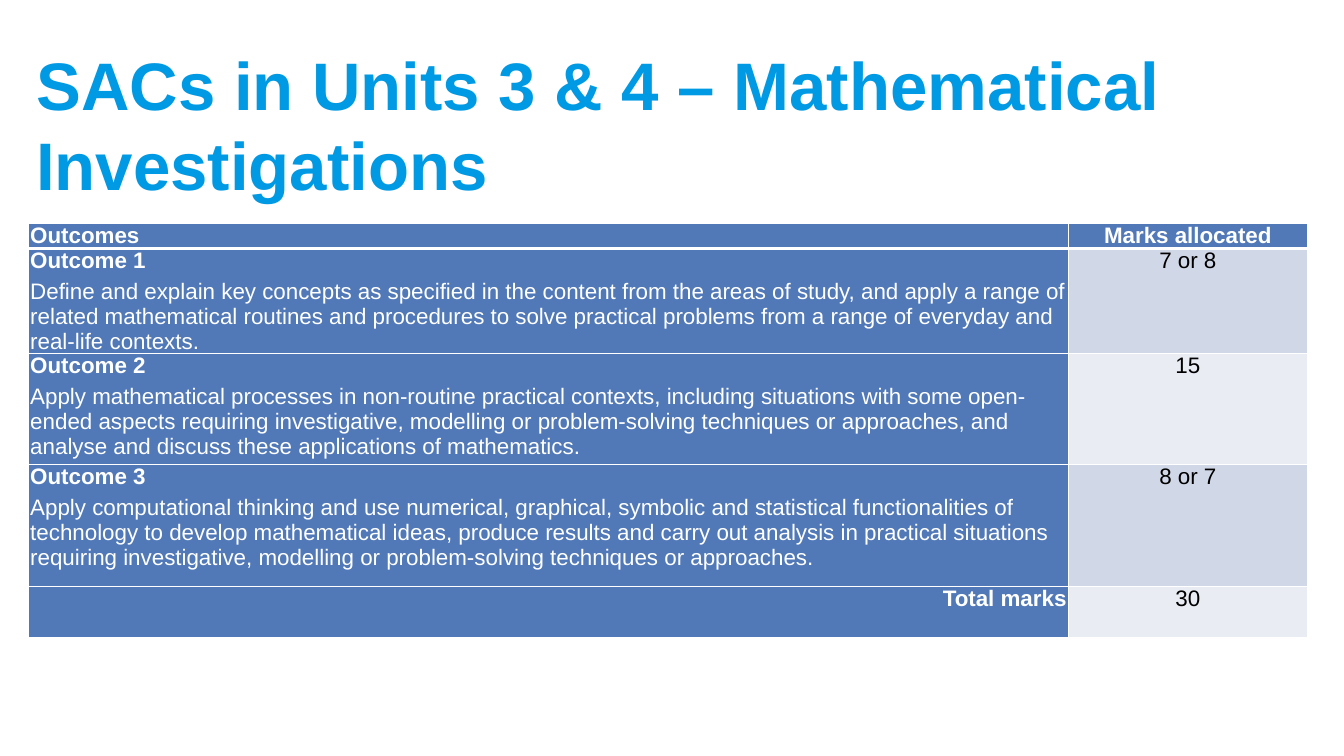
from pptx import Presentation
from pptx.dml.color import RGBColor
from pptx.enum import text
from pptx.oxml import parse_xml
from pptx.oxml.ns import nsdecls
from pptx.util import Pt

FONT = "Arial"
WHITE, BLACK, TITLE_BLUE = "FFFFFF", "000000", "0099E3"
CELL_BLUE, BANDS = "5179B8", ("D0D7E6", "E9ECF3")
LEFT, CENTER, RIGHT = text.PP_ALIGN.LEFT, text.PP_ALIGN.CENTER, text.PP_ALIGN.RIGHT

COL_WIDTHS = (743, 170.6)
ROW_HEIGHTS = (7.2, 68.4, 79.2, 87.1, 36.7)

# Outcome, description, marks, space after the description
OUTCOMES = [
    ("Outcome 1",
     "Define and explain key concepts as specified in the content from the areas "
     "of study, and apply a range of related mathematical routines and procedures "
     "to solve practical problems from a range of everyday and real-life contexts.",
     "7 or 8", 6),
    ("Outcome 2",
     "Apply mathematical processes in non-routine practical contexts, including "
     "situations with some open-ended aspects requiring investigative, modelling or "
     "problem-solving techniques or approaches, and analyse and discuss these "
     "applications of mathematics.",
     "15", 6),
    ("Outcome 3",
     "Apply computational thinking and use numerical, graphical, symbolic and "
     "statistical functionalities of technology to develop mathematical ideas, "
     "produce results and carry out analysis in practical situations requiring "
     "investigative, modelling or problem-solving techniques or approaches.",
     "8 or 7", 12),
]


def rgb(color):
    return RGBColor.from_string(color)


def write(p, words, size, color, bold=False, align=LEFT, after=0):
    p.text = words
    p.alignment = align
    p.space_before, p.space_after = Pt(0), Pt(after)
    for r in p.runs:
        r.font.name, r.font.size, r.font.bold = FONT, Pt(size), bold
        r.font.color.rgb = rgb(color)


def add_title(slide, words):
    title = slide.shapes.title
    title.left, title.top, title.width, title.height = Pt(18.7), Pt(43.2), Pt(914.4), Pt(90)
    tf = title.text_frame
    tf.word_wrap = True
    tf.auto_size = text.MSO_AUTO_SIZE.NONE
    tf.vertical_anchor = text.MSO_ANCHOR.MIDDLE
    write(tf.paragraphs[0], words, 48, TITLE_BLUE, True)


def set_borders(cell, top=1, bottom=1):
    tc_pr = cell._tc.get_or_add_tcPr()
    widths = {"L": 1, "R": 1, "T": top, "B": bottom}
    for i, (side, width) in enumerate(widths.items()):
        tc_pr.insert(i, parse_xml(
            f'<a:ln{side} {nsdecls("a")} w="{Pt(width)}"><a:solidFill>'
            f'<a:srgbClr val="{WHITE}"/></a:solidFill></a:ln{side}>'))


def fill_cell(cell, fill, paragraphs, align=LEFT):
    """Each paragraph is (words, colour, bold, space after)."""
    cell.fill.solid()
    cell.fill.fore_color.rgb = rgb(fill)
    cell.margin_left = cell.margin_right = Pt(1.4)
    cell.margin_top = cell.margin_bottom = Pt(0)
    tf = cell.text_frame
    for i, (words, color, bold, after) in enumerate(paragraphs):
        p = tf.add_paragraph() if i else tf.paragraphs[0]
        write(p, words, 16, color, bold, align, after)


def add_marks_table(slide):
    frame = slide.shapes.add_table(len(ROW_HEIGHTS), len(COL_WIDTHS), Pt(20.2), Pt(159.8),
                                   Pt(sum(COL_WIDTHS)), Pt(sum(ROW_HEIGHTS)))
    table = frame.table
    for column, width in zip(table.columns, COL_WIDTHS):
        column.width = Pt(width)
    for row, height in zip(table.rows, ROW_HEIGHTS):
        row.height = Pt(height)

    # Header row
    fill_cell(table.cell(0, 0), CELL_BLUE, [("Outcomes", WHITE, True, 4)])
    fill_cell(table.cell(0, 1), CELL_BLUE, [("Marks allocated", WHITE, True, 4)], CENTER)

    # Outcome rows
    for row, (name, description, _, after) in enumerate(OUTCOMES, 1):
        fill_cell(table.cell(row, 0), CELL_BLUE,
                  [(name, WHITE, True, 4), (description, WHITE, False, after)])

    # Total row and marks column
    last = len(ROW_HEIGHTS) - 1
    fill_cell(table.cell(last, 0), CELL_BLUE, [("Total marks", WHITE, True, 4)], RIGHT)
    marks = [outcome[2] for outcome in OUTCOMES] + ["30"]
    for row, mark in enumerate(marks, 1):
        fill_cell(table.cell(row, 1), BANDS[(row - 1) % 2], [(mark, BLACK, False, 4)], CENTER)

    # White grid, heavier below the header
    for row in range(len(ROW_HEIGHTS)):
        for col in range(len(COL_WIDTHS)):
            set_borders(table.cell(row, col), top=3 if row == 1 else 1,
                        bottom=3 if row == 0 else 1)


def main():
    prs = Presentation()
    prs.slide_width, prs.slide_height = Pt(960), Pt(540)
    slide = prs.slides.add_slide(prs.slide_layouts[5])
    add_title(slide, "SACs in Units 3 & 4 – Mathematical Investigations")
    add_marks_table(slide)
    prs.save("out.pptx")


if __name__ == "__main__":
    main()
